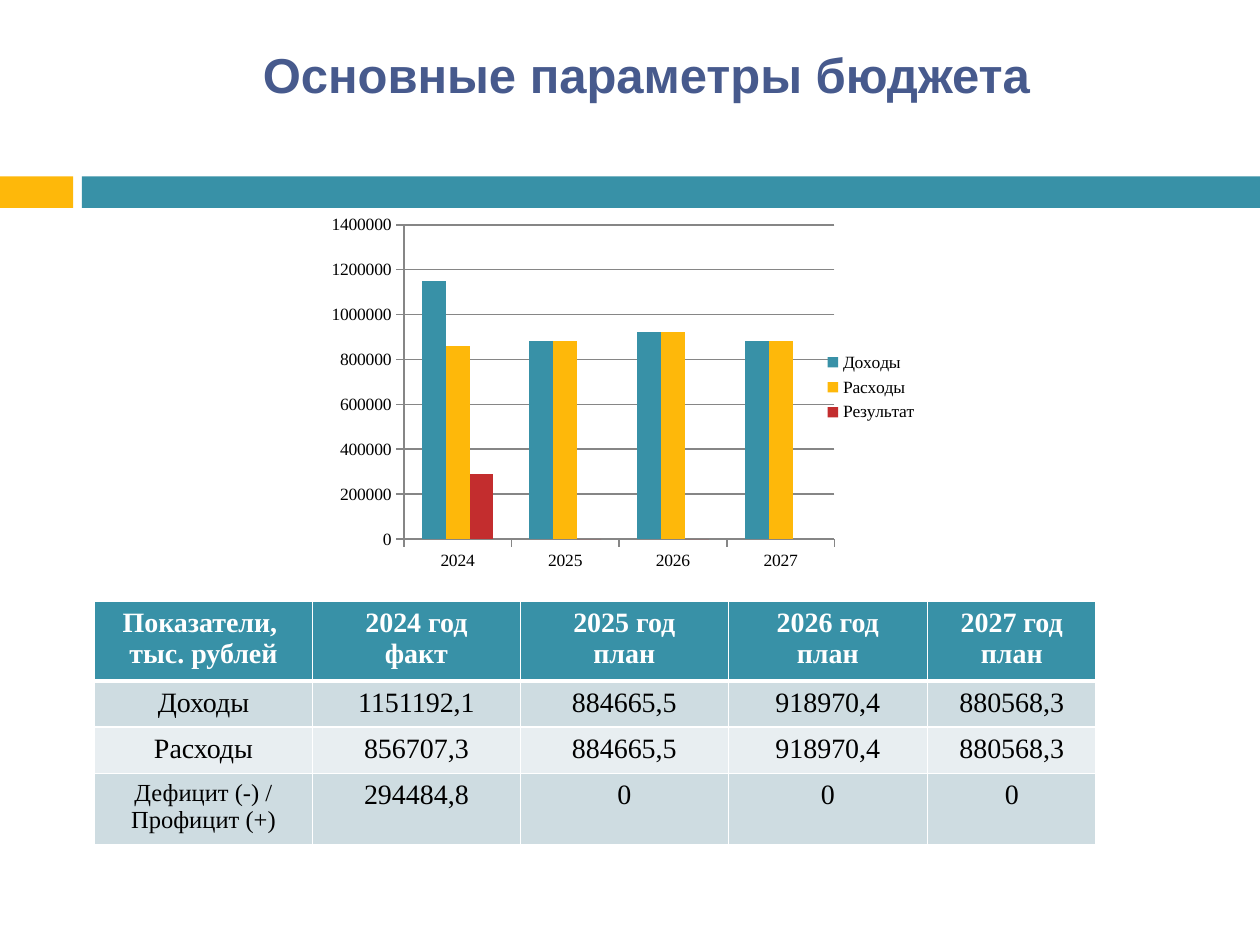
"""Build a slide with the main budget parameters: a column chart over a table."""
from dataclasses import dataclass

from lxml import etree
from pptx import Presentation
from pptx.chart.data import CategoryChartData
from pptx.dml.color import RGBColor
from pptx.enum import chart as ch, shapes, text
from pptx.oxml import ns
from pptx.util import Inches, Pt


@dataclass(frozen=True)
class Theme:
    teal: str = "3891A7"
    amber: str = "FEB80A"
    red: str = "C32D2E"
    title: str = "475A8D"
    odd: str = "CEDCE1"
    even: str = "E8EEF1"
    white: str = "FFFFFF"
    black: str = "000000"
    axis: str = "868686"
    title_font: str = "Arial"
    body_font: str = "Times New Roman"
    title_size: int = 28
    table_size: int = 16
    small_size: int = 14
    chart_size: int = 10


@dataclass(frozen=True)
class Bar:
    left: float
    width: float
    color: str


@dataclass(frozen=True)
class Series:
    name: str
    values: tuple
    color: str


T = Theme()
BARS = (Bar(0, 0.58, T.amber), Bar(0.65, 9.35, T.teal))
YEARS = ("2024", "2025", "2026", "2027")
SERIES = (
    Series("Доходы", (1150000, 880000, 920000, 880000), T.teal),
    Series("Расходы", (860000, 880000, 920000, 880000), T.amber),
    Series("Результат", (290000, 0, 0, None), T.red),
)
COLUMNS = (1.73, 1.65, 1.65, 1.58, 1.34)
ROW_HEIGHTS = (0.6, 0.35, 0.35, 0.52)
ROWS = (
    ("Показатели, \nтыс. рублей", "2024 год\nфакт", "2025 год\nплан",
     "2026 год\nплан", "2027 год\nплан"),
    ("Доходы", "1151192,1", "884665,5", "918970,4", "880568,3"),
    ("Расходы", "856707,3", "884665,5", "918970,4", "880568,3"),
    ("Дефицит (-) /\nПрофицит (+)", "294484,8", "0", "0", "0"),
)


def rgb(color: str) -> RGBColor:
    return RGBColor.from_string(color)


def set_font(font, color: str, **attrs) -> None:
    for name, value in attrs.items():
        setattr(font, name, value)
    font.color.rgb = rgb(color)


def write(tf, content: str, color: str, **attrs) -> None:
    tf.text = content
    for p in tf.paragraphs:
        p.alignment = text.PP_ALIGN.CENTER
        for r in p.runs:
            set_font(r.font, color, **attrs)


def add_bar(s, bar: Bar) -> None:
    sp = s.shapes.add_shape(shapes.MSO_SHAPE.RECTANGLE, Inches(bar.left),
                            Inches(1.4), Inches(bar.width), Inches(0.25))
    sp.shadow.inherit = False
    sp.fill.solid()
    sp.fill.fore_color.rgb = rgb(bar.color)
    sp.line.fill.background()


def add_title(s) -> None:
    tf = s.shapes.add_textbox(Inches(0.67), Inches(0.25), Inches(8.92), Inches(0.67)).text_frame
    tf.word_wrap = True
    tf.vertical_anchor = text.MSO_ANCHOR.MIDDLE
    write(tf, "Основные параметры бюджета", T.title,
          name=T.title_font, size=Pt(T.title_size), bold=True)


def set_layout(parent, after: str, inner: bool = False, **box: float) -> None:
    for old in parent.findall(ns.qn("c:layout")):
        parent.remove(old)
    layout = etree.Element(ns.qn("c:layout"))
    manual = etree.SubElement(layout, ns.qn("c:manualLayout"))
    settings = {"layoutTarget": "inner"} if inner else {}
    settings |= {"xMode": "edge", "yMode": "edge", **box}
    for tag, value in settings.items():
        etree.SubElement(manual, ns.qn(f"c:{tag}")).set("val", str(value))
    anchor = parent.find(ns.qn(after)) if after else None
    parent.insert(0 if anchor is None else parent.index(anchor) + 1, layout)


def style_line(line) -> None:
    line.color.rgb = rgb(T.axis)
    line.width = Pt(1)


def add_budget_chart(s) -> None:
    data = CategoryChartData()
    data.categories = YEARS
    for series in SERIES:
        data.add_series(series.name, series.values)
    chart = s.shapes.add_chart(ch.XL_CHART_TYPE.COLUMN_CLUSTERED, Inches(2.1), Inches(1.7),
                               Inches(5.26), Inches(2.83), data).chart
    set_font(chart.font, T.black, name=T.body_font, size=Pt(T.chart_size))
    chart.has_title = False
    plot = chart.plots[0]
    for name, value in {"gap_width": 150, "overlap": 0, "vary_by_categories": False}.items():
        setattr(plot, name, value)
    for drawn, series in zip(plot.series, SERIES):
        drawn.format.fill.solid()
        drawn.format.fill.fore_color.rgb = rgb(series.color)
    for axis in (chart.category_axis, chart.value_axis):
        axis.major_tick_mark = ch.XL_TICK_MARK.OUTSIDE
        style_line(axis.format.line)
    scale = {"minimum_scale": 0, "maximum_scale": 1400000, "major_unit": 200000}
    for name, value in scale.items():
        setattr(chart.value_axis, name, value)
    style_line(chart.value_axis.major_gridlines.format.line)
    chart.has_legend = True
    chart.legend.position = ch.XL_LEGEND_POSITION.RIGHT
    chart.legend.include_in_layout = False
    plot_area = chart.element.find(f".//{ns.qn('c:plotArea')}")
    legend = chart.element.find(f".//{ns.qn('c:legend')}")
    set_layout(plot_area, "", inner=True, x=0.21, y=0.03, w=0.65, h=0.9)
    set_layout(legend, "c:legendPos", x=0.83, y=0.38, w=0.17, h=0.23)


def set_borders(cell, bottom: float) -> None:
    props = cell._tc.get_or_add_tcPr()
    for i, (side, width) in enumerate({"L": 1, "R": 1, "T": 1, "B": bottom}.items()):
        ln = etree.Element(ns.qn(f"a:ln{side}"), w=str(int(Pt(width))))
        fill = etree.SubElement(ln, ns.qn("a:solidFill"))
        etree.SubElement(fill, ns.qn("a:srgbClr"), val=T.white)
        props.insert(i, ln)


def add_budget_table(s) -> None:
    table = s.shapes.add_table(len(ROWS), len(COLUMNS), Inches(0.75), Inches(4.77),
                               Inches(sum(COLUMNS)), Inches(sum(ROW_HEIGHTS))).table
    for column, width in zip(table.columns, COLUMNS):
        column.width = Inches(width)
    for i, (row, height) in enumerate(zip(table.rows, ROW_HEIGHTS)):
        row.height = Inches(height)
        header = i == 0
        fill = T.teal if header else (T.even, T.odd)[i % 2]
        for cell, content in zip(row.cells, ROWS[i]):
            for side in ("left", "top", "right", "bottom"):
                setattr(cell, f"margin_{side}", Inches(0.05))
            cell.fill.solid()
            cell.fill.fore_color.rgb = rgb(fill)
            set_borders(cell, 3 if header else 1)
            small = not header and "\n" in content
            write(cell.text_frame, content, T.white if header else T.black, name=T.body_font,
                  size=Pt(T.small_size if small else T.table_size), bold=header)


def main() -> None:
    prs = Presentation()
    prs.slide_width, prs.slide_height = Inches(10), Inches(7.5)
    s = prs.slides.add_slide(prs.slide_layouts[6])
    for bar in BARS:
        add_bar(s, bar)
    add_title(s)
    add_budget_table(s)
    add_budget_chart(s)
    prs.save("out.pptx")


if __name__ == "__main__":
    main()
